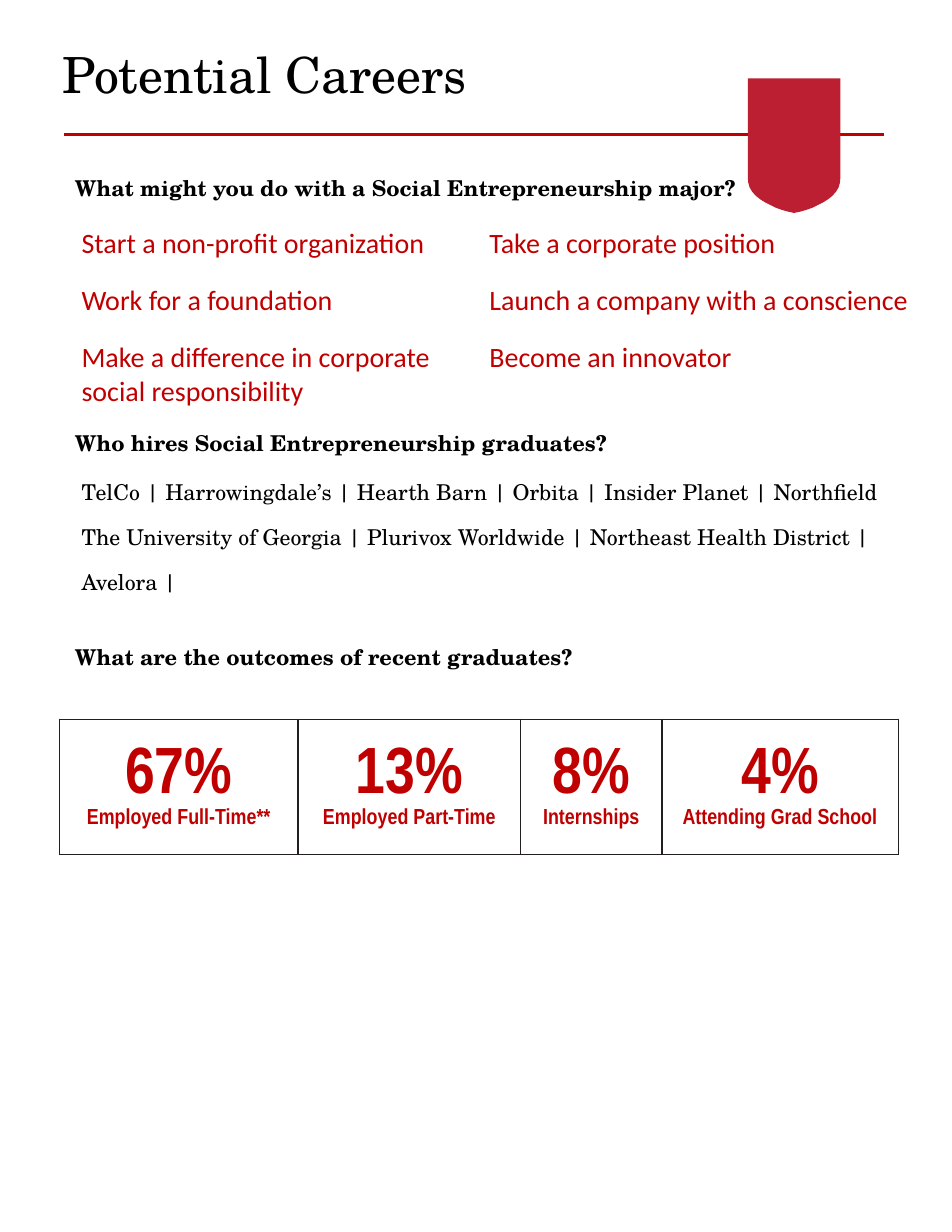
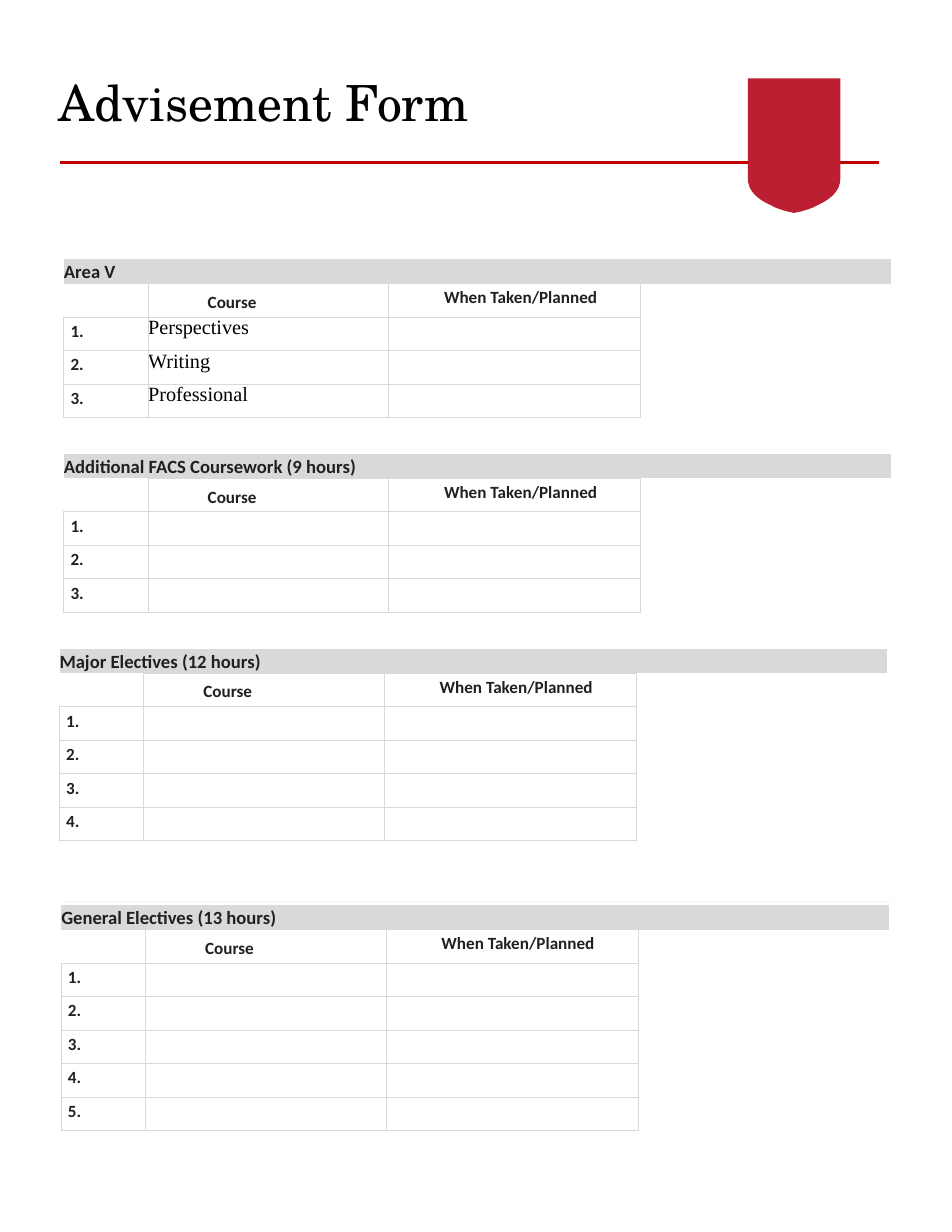
from dataclasses import dataclass

from lxml.etree import SubElement
from pptx import Presentation
from pptx.dml.color import RGBColor
from pptx.enum.shapes import MSO_CONNECTOR as Connector
from pptx.enum.text import MSO_ANCHOR as Anchor, MSO_AUTO_SIZE as AutoSize, PP_ALIGN as Align
from pptx.oxml.ns import qn
from pptx.util import Cm, Pt

# Content of the careers slide
CAREERS_TITLE = "Potential Careers"
HEADINGS = [  # text, top in cm
    ("What might you do with a Social Entrepreneurship major?", 3.84),
    ("Who hires Social Entrepreneurship graduates?", 9.63),
    ("What are the outcomes of recent graduates?", 14.48),
]
CAREERS = [
    ("Start a non-profit organization", "Take a corporate position"),
    ("Work for a foundation", "Launch a company with a conscience"),
    ("Make a difference in corporate social responsibility", "Become an innovator"),
]
EMPLOYERS = [
    "TelCo | Harrowingdale’s | Hearth Barn | Orbita | Insider Planet | Northfield",
    "The University of Georgia | Plurivox Worldwide | Northeast Health District |",
    "Avelora |",
]
OUTCOMES = [  # share, label, column width in cm
    ("67%", "Employed Full-Time**", 5.41),
    ("13%", "Employed Part-Time", 5.05),
    ("8%", "Internships", 3.2),
    ("4%", "Attending Grad School", 5.36),
]

# Content of the advisement slide
FORM_TITLE = "Advisement Form"
SECTIONS = [  # name, courses, left and top in cm
    ("Area V", ["Perspectives", "Writing", "Professional"], 1.45, 5.87),
    ("Additional FACS Coursework (9 hours)", [""] * 3, 1.45, 10.29),
    ("Major Electives (12 hours)", [""] * 4, 1.35, 14.71),
    ("General Electives (13 hours)", [""] * 5, 1.39, 20.52),
]
FORM_COLUMNS = [1.91, 5.46, 5.71, 5.68]

# Half width and depth of the shield's lower edge, in cm
SHIELD_EDGE = [
    (1.05, 2.24), (1.04, 2.36), (1.01, 2.47), (0.95, 2.57), (0.87, 2.66), (0.77, 2.74),
    (0.66, 2.81), (0.54, 2.87), (0.42, 2.93), (0.28, 2.98), (0.14, 3.02), (0, 3.05),
]


@dataclass(frozen=True)
class Theme:
    black: RGBColor = RGBColor(0, 0, 0)
    ink: RGBColor = RGBColor(0x23, 0x1F, 0x20)
    red: RGBColor = RGBColor(0xC0, 0, 0)
    shield: RGBColor = RGBColor(0xBB, 0x1F, 0x31)
    gray: RGBColor = RGBColor(0xDA, 0xD9, 0xD9)
    pale: RGBColor = RGBColor(0xF2, 0xF2, 0xF2)
    serif: str = "TeX Gyre Schola"
    sans: str = "Calibri"
    narrow: str = "Arial Narrow"
    entry: str = "Times New Roman"
    title: int = 32
    figure: int = 42
    career: int = 18
    body: int = 14
    course: int = 13
    section: int = 12
    label: int = 11


THEME = Theme()


# Shared helpers
def style(paragraph, name, size, color, bold=False):
    font = paragraph.font
    font.name, font.size, font.bold = name, Pt(size), bold
    font.color.rgb = color


def add_text(slide, lines, left, top, width, height, *look, after=0):
    frame = slide.shapes.add_textbox(Cm(left), Cm(top), Cm(width), Cm(height)).text_frame
    frame.word_wrap = True
    frame.text = "\n".join(lines)
    for paragraph in frame.paragraphs:
        paragraph.space_after = Pt(after)
        style(paragraph, *look)


def add_rule(slide, left, top, width, color, weight):
    rule = slide.shapes.add_connector(
        Connector.STRAIGHT, Cm(left), Cm(top), Cm(left + width), Cm(top))
    rule.line.color.rgb = color
    rule.line.width = Pt(weight)
    SubElement(rule._element.spPr, qn("a:effectLst"))


def add_shield(slide, center=18.01, top=1.78):
    left_edge = [(-half, depth) for half, depth in SHIELD_EDGE]
    outline = [(-1.05, 0), *left_edge, *SHIELD_EDGE[-2::-1], (1.05, 0)]
    points = [(Cm(center + x), Cm(top + y)) for x, y in outline]
    builder = slide.shapes.build_freeform(*points[0])
    builder.add_line_segments(points[1:])
    shield = builder.convert_to_shape()
    shield.shadow.inherit = False
    shield.fill.solid()
    shield.fill.fore_color.rgb = THEME.shield
    shield.line.fill.background()


def add_page(presentation, title, left, top, rule_left, rule_top):
    slide = presentation.slides.add_slide(presentation.slide_layouts[5])
    shape = slide.shapes.title
    shape.left, shape.top, shape.width, shape.height = Cm(left), Cm(top), Cm(18.72), Cm(1.63)
    frame = shape.text_frame
    frame.text = title
    frame.auto_size, frame.vertical_anchor = AutoSize.NONE, Anchor.TOP
    frame.paragraphs[0].alignment = Align.LEFT
    style(frame.paragraphs[0], THEME.serif, THEME.title, THEME.black)
    add_rule(slide, rule_left, rule_top, 18.59, THEME.red, 2.25)
    add_shield(slide)
    return slide


def add_table(slide, left, top, widths, heights):
    table = slide.shapes.add_table(
        len(heights), len(widths), Cm(left), Cm(top), Cm(sum(widths)), Cm(sum(heights))).table
    table.first_row = table.horz_banding = False
    for column, width in zip(table.columns, widths):
        column.width = Cm(width)
    for row, height in zip(table.rows, heights):
        row.height = Cm(height)
    return table


def format_cell(cell, sides, color, weight, fill=None, left=0, top=0, anchor=Anchor.TOP):
    """Set margins, borders on the given sides (of "LRTB") and fill."""
    cell.margin_left, cell.margin_top = Cm(left), Cm(top)
    cell.margin_right = cell.margin_bottom = 0
    cell.vertical_anchor = anchor
    properties = cell._tc.get_or_add_tcPr()
    for side in "LRTB":
        line = SubElement(properties, qn(f"a:ln{side}"), w=str(Pt(weight)))
        if side in sides:
            paint = SubElement(line, qn("a:solidFill"))
            SubElement(paint, qn("a:srgbClr"), val=str(color))
        else:
            SubElement(line, qn("a:noFill"))
    if fill is None:
        cell.fill.background()
    else:
        cell.fill.solid()
        cell.fill.fore_color.rgb = fill


# Careers slide
def add_outcomes(slide):
    table = add_table(slide, 1.35, 16.31, [width for _, _, width in OUTCOMES], [3.07])
    for cell, (share, label, _) in zip(table.rows[0].cells, OUTCOMES):
        format_cell(cell, "LRTB", THEME.ink, 1, anchor=Anchor.MIDDLE)
        cell.text = f"{share}\n{label}"
        looks = [(THEME.figure, 39.9), (THEME.body, 14)]
        for paragraph, (size, spacing) in zip(cell.text_frame.paragraphs, looks):
            paragraph.alignment = Align.CENTER
            paragraph.line_spacing = Pt(spacing)
            style(paragraph, THEME.narrow, size, THEME.red, True)


def build_careers(presentation):
    slide = add_page(presentation, CAREERS_TITLE, 1.17, 0.86, 1.45, 3.05)
    for heading, top in HEADINGS:
        add_text(slide, [heading], 1.45, top, 18.87, 0.86,
                 THEME.serif, THEME.body, THEME.black, True)
    for row, pair in enumerate(CAREERS):
        for career, left, width in zip(pair, (1.6, 10.85), (9.02, 10.57)):
            add_text(slide, [career], left, 4.98 + 1.3 * row, width, 1.02,
                     THEME.sans, THEME.career, THEME.red)
    add_text(slide, EMPLOYERS, 1.6, 10.74, 18.87, 2.9,
             THEME.serif, THEME.body, THEME.black, after=12)
    add_outcomes(slide)


# Advisement slide
def add_section(slide, name, courses, left, top):
    table = add_table(slide, left, top, FORM_COLUMNS, [0.56] + [0.76] * (len(courses) + 1))
    label_look = (THEME.sans, THEME.label, THEME.ink, True)
    course_look = (THEME.entry, THEME.course, THEME.black)

    def fill_cell(row, column, text, look, sides="LRTB", **layout):
        cell = table.cell(row, column)
        format_cell(cell, sides, THEME.gray, 0.75, **layout)
        cell.text = text
        style(cell.text_frame.paragraphs[0], *look)
        return cell

    # Section bar
    bar = fill_cell(0, 0, name, (THEME.sans, THEME.section, THEME.ink, True), "",
                    fill=THEME.gray, anchor=Anchor.BOTTOM)
    bar.text_frame.paragraphs[0].line_spacing = Pt(11.4)
    bar.merge(table.cell(0, 3))

    # Column heads
    fill_cell(1, 0, "", label_look, "RB")
    fill_cell(1, 1, "Course", label_look, left=1.35, top=0.09, anchor=Anchor.MIDDLE)
    fill_cell(1, 2, "When Taken/Planned", label_look, left=1.25, top=0.09)
    fill_cell(1, 3, "", label_look, "L")

    # Numbered courses
    for number, course in enumerate(courses, 1):
        row = number + 1
        fill_cell(row, 0, f"{number}.", label_look, left=0.15, top=0.09)
        fill_cell(row, 1, course, course_look)
        fill_cell(row, 2, "", label_look)
        fill_cell(row, 3, "", label_look, "L")
    table.cell(1, 3).merge(table.cell(len(courses) + 1, 3))


def build_form(presentation):
    slide = add_page(presentation, FORM_TITLE, 1.07, 1.5, 1.35, 3.68)
    add_rule(slide, 1.45, 20.45, 18.75, THEME.pale, 0.5)
    for section in SECTIONS:
        add_section(slide, *section)


def main():
    presentation = Presentation()
    presentation.slide_width, presentation.slide_height = Cm(21.59), Cm(27.94)
    build_careers(presentation)
    build_form(presentation)
    presentation.save("out.pptx")


if __name__ == "__main__":
    main()
